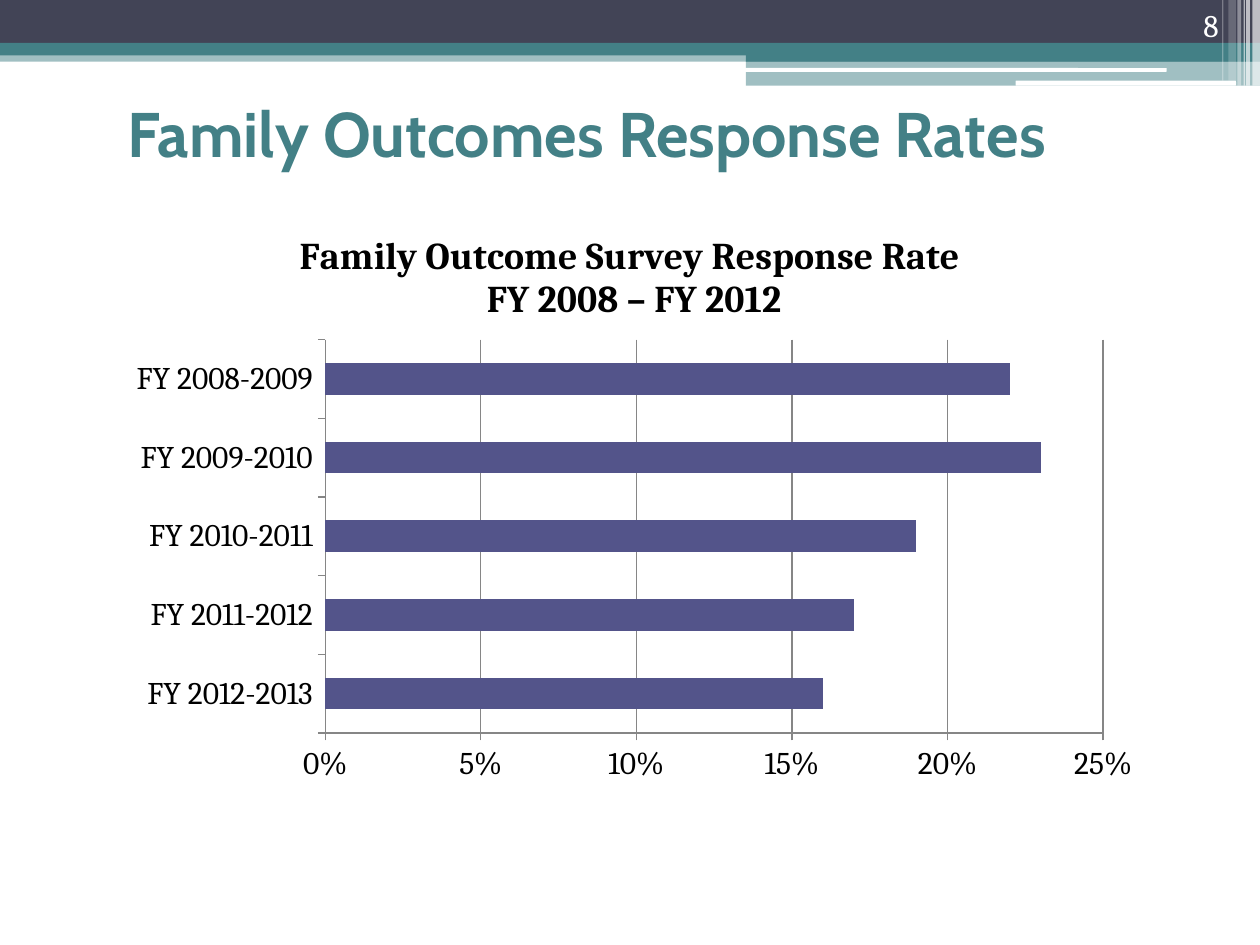
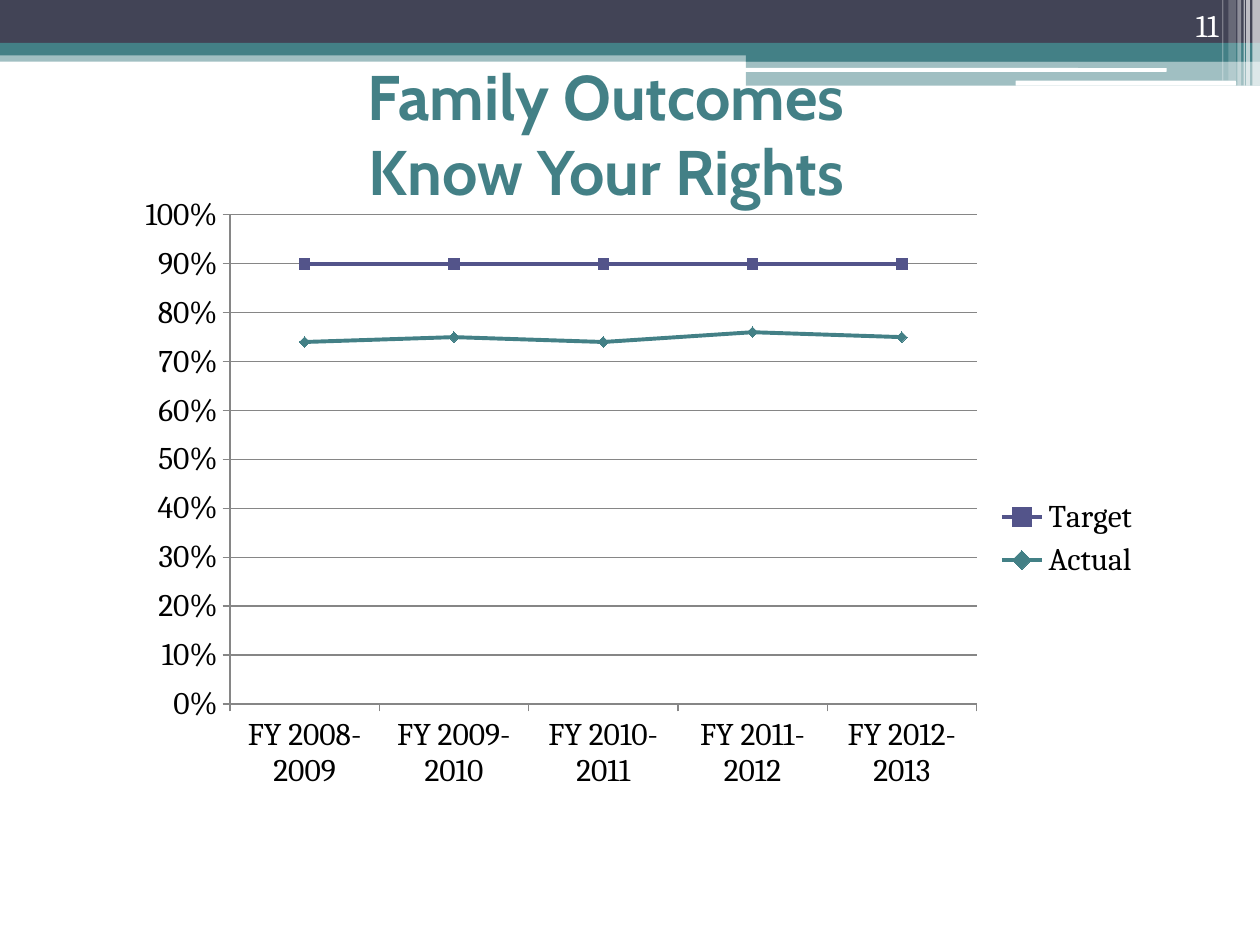
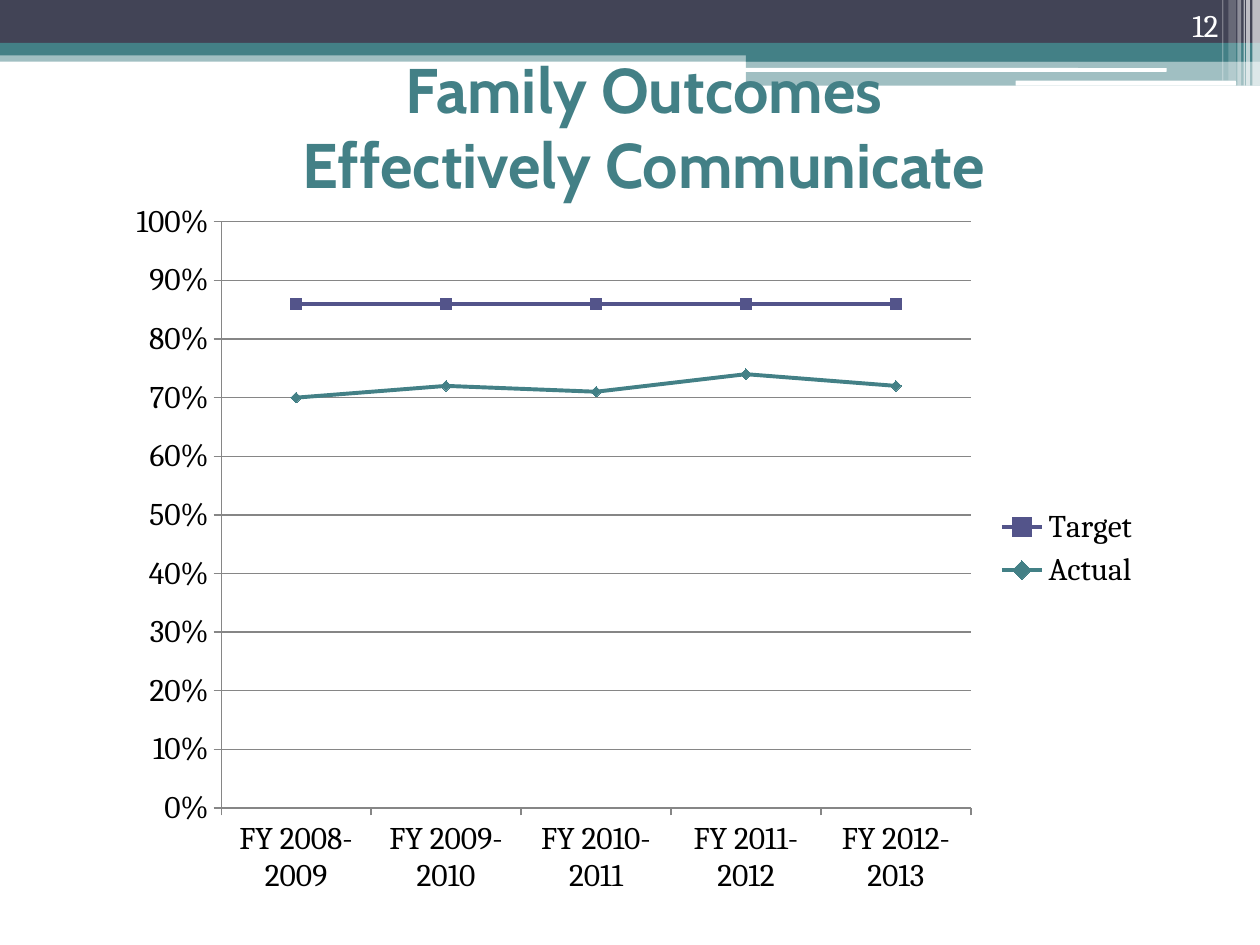
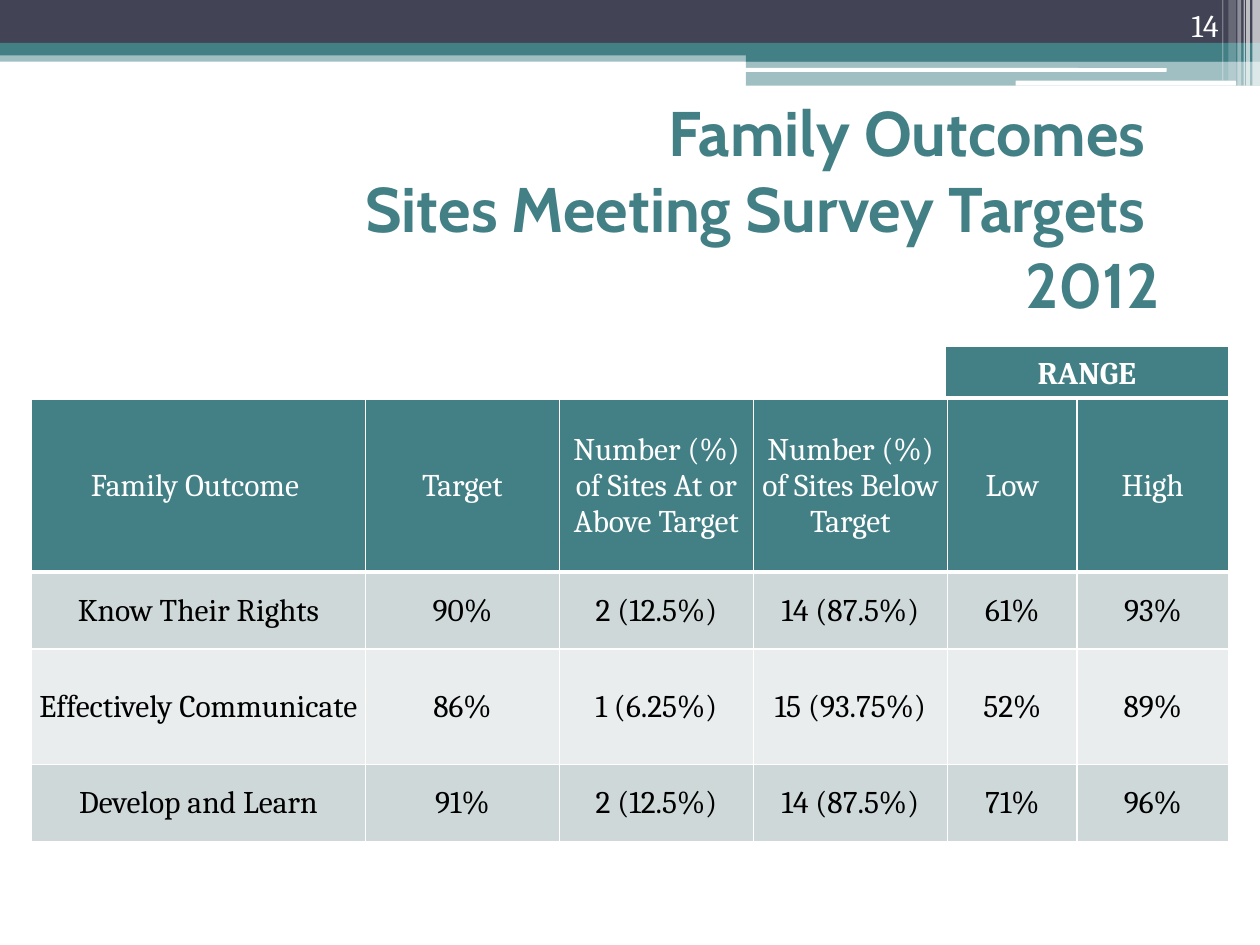
from dataclasses import dataclass

from lxml.etree import SubElement as Sub
from pptx import Presentation
from pptx.chart.chart import Chart
from pptx.chart.data import CategoryChartData as ChartData
from pptx.dml.color import RGBColor
from pptx.enum.chart import XL_CHART_TYPE as Kind
from pptx.enum.chart import XL_LEGEND_POSITION as Legend
from pptx.enum.chart import XL_MARKER_STYLE as Mark
from pptx.enum.chart import XL_TICK_MARK as Tick
from pptx.enum.shapes import MSO_SHAPE as Form
from pptx.enum.text import MSO_ANCHOR as Anchor
from pptx.enum.text import PP_ALIGN as Align
from pptx.oxml.ns import qn
from pptx.slide import Slide
from pptx.table import _Cell as Cell
from pptx.text.text import TextFrame
from pptx.util import Inches, Pt

# Colours and fonts
TEAL = RGBColor(0x43, 0x80, 0x86)
SLATE = RGBColor(0x42, 0x44, 0x56)
VIOLET = RGBColor(0x53, 0x54, 0x8A)
WHITE = RGBColor(0xFF, 0xFF, 0xFF)
BLACK = RGBColor(0, 0, 0)
GREY = RGBColor(0x86, 0x86, 0x86)
DARK_ROW = RGBColor(0xCF, 0xD8, 0xD9)
LIGHT_ROW = RGBColor(0xE9, 0xED, 0xED)
HEAD_FONT = "Cabin"
BODY_FONT = "Cambria"

YEARS = [f"FY {year}-{year + 1}" for year in range(2008, 2013)]


@dataclass(frozen=True)
class Box:
    left: float
    top: float
    width: float
    height: float

    def place(self) -> tuple:
        return tuple(map(Inches, (self.left, self.top, self.width, self.height)))


@dataclass(frozen=True)
class Band:
    box: Box
    color: RGBColor
    alpha: int = 100
    form: Form = Form.RECTANGLE


@dataclass(frozen=True)
class Style:
    size: float = 18
    color: RGBColor = BLACK
    font: str = BODY_FONT
    bold: bool = False


TITLE = Style(36, TEAL, HEAD_FONT, True)
PLAIN = Style()
LIGHT = Style(color=WHITE)
RANGE = Style(color=WHITE, bold=True)

# Header bands, then the fading stripes at the right edge
BANDS = [
    Band(Box(0, 0.4, 10, 0.09), TEAL, 50),
    Band(Box(0, 0, 10, 0.34), SLATE),
    Band(Box(0, 0.34, 10, 0.1), TEAL),
    Band(Box(5.92, 0.39, 4.08, 0.1), TEAL),
    Band(Box(5.92, 0.48, 4.08, 0.2), TEAL, 50),
    Band(Box(5.91, 0.54, 3.35, 0.03), WHITE, form=Form.ROUNDED_RECTANGLE),
    Band(Box(8.06, 0.64, 1.75, 0.04), WHITE, form=Form.ROUNDED_RECTANGLE),
] + [
    Band(Box(left, 0, width, height), WHITE, alpha)
    for left, width, height, alpha in [
        (9.94, 0.06, 0.68, 65), (9.89, 0.03, 0.68, 65), (9.87, 0.01, 0.68, 60),
        (9.82, 0.03, 0.68, 40), (9.75, 0.06, 0.64, 20), (9.7, 0.01, 0.64, 30),
    ]
]


# Text and shapes
def write(frame: TextFrame, text: str, style: Style, align: Align) -> None:
    para = frame.paragraphs[0]
    para.alignment = align
    for index, line in enumerate(text.split("\n")):
        if index:
            para.add_line_break()
        run = para.add_run()
        run.text = line
        font = run.font
        font.size, font.name, font.bold = Pt(style.size), style.font, style.bold
        font.color.rgb = style.color


def add_text(slide: Slide, box: Box, text: str, style: Style,
             align: Align, anchor: Anchor) -> None:
    frame = slide.shapes.add_textbox(*box.place()).text_frame
    frame.word_wrap = True
    frame.vertical_anchor = anchor
    write(frame, text, style, align)


def add_band(slide: Slide, band: Band):
    shape = slide.shapes.add_shape(band.form, *band.box.place())
    shape.shadow.inherit = False
    shape.fill.solid()
    shape.fill.fore_color.rgb = band.color
    shape.line.fill.background()
    if band.alpha < 100:
        color = shape.element.spPr.find(f"{qn('a:solidFill')}/{qn('a:srgbClr')}")
        Sub(color, qn("a:alpha"), val=str(band.alpha * 1000))
    return shape


def add_slide(deck, number: int, title: str, box: Box,
              align: Align = Align.CENTER) -> Slide:
    slide = deck.slides.add_slide(deck.slide_layouts[6])
    for band in BANDS:
        add_band(slide, band)
    add_text(slide, box, title, TITLE, align, Anchor.MIDDLE)
    add_text(slide, Box(8.94, 0, 0.83, 0.4), str(number), LIGHT,
             Align.RIGHT, Anchor.BOTTOM)
    return slide


# Charts
def add_chart(slide: Slide, kind: Kind, box: Box, cats: list[str],
              series: dict[str, tuple], top: float, step: float) -> Chart:
    data = ChartData(number_format="0%")
    data.categories = cats
    for name, values in series.items():
        data.add_series(name, values)
    chart = slide.shapes.add_chart(kind, *box.place(), data).chart
    chart.font.size, chart.font.name = Pt(18), BODY_FONT
    chart.font.color.rgb = BLACK
    chart.has_title = chart.has_legend = False
    chart.plots[0].vary_by_categories = False
    scale = chart.value_axis
    scale.minimum_scale, scale.maximum_scale, scale.major_unit = 0, top, step
    scale.tick_labels.number_format = "0%"
    scale.tick_labels.number_format_is_linked = False
    scale.has_major_gridlines = True
    for axis in (scale, chart.category_axis):
        axis.major_tick_mark = Tick.OUTSIDE
    for part in (scale, chart.category_axis, scale.major_gridlines):
        part.format.line.color.rgb = GREY
        part.format.line.width = Pt(0.75)
    return chart


def add_bars(slide: Slide) -> None:
    rates = (0.16, 0.17, 0.19, 0.23, 0.22)
    chart = add_chart(slide, Kind.BAR_CLUSTERED, Box(0.92, 1.67, 8.23, 4.63),
                      YEARS[::-1], {"Series 1": rates}, 0.25, 0.05)
    plot = chart.plots[0]
    plot.gap_width = 150
    fill = plot.series[0].format.fill
    fill.solid()
    fill.fore_color.rgb = VIOLET
    chart.has_title = True
    write(chart.chart_title.text_frame,
          "Family Outcome Survey Response Rate \nFY 2008 – FY 2012",
          Style(21.6, bold=True), Align.CENTER)
    chart.chart_title.include_in_layout = False


def add_lines(slide: Slide, top: float, target: float, actual: tuple) -> Chart:
    series = {"Target": (target,) * len(YEARS), "Actual": actual}
    chart = add_chart(slide, Kind.LINE_MARKERS, Box(0.92, top, 8.23, 5.71),
                      YEARS, series, 1, 0.1)
    looks = [(VIOLET, Mark.SQUARE), (TEAL, Mark.DIAMOND)]
    for line, (color, mark) in zip(chart.plots[0].series, looks):
        line.smooth = False
        line.format.line.color.rgb = color
        line.format.line.width = Pt(2.25)
        line.marker.style, line.marker.size = mark, 6
        line.marker.format.fill.solid()
        line.marker.format.fill.fore_color.rgb = color
        line.marker.format.line.color.rgb = color
    chart.has_legend = True
    chart.legend.position = Legend.RIGHT
    chart.legend.include_in_layout = False
    return chart


def set_plot(chart: Chart, left: float, top: float,
             width: float, height: float) -> None:
    area = chart.element.find(f".//{qn('c:plotArea')}")
    layout = area.find(qn("c:layout"))
    if layout is None:
        layout = area.makeelement(qn("c:layout"))
        area.insert(0, layout)
    manual = Sub(layout, qn("c:manualLayout"))
    parts = {"layoutTarget": "inner", "xMode": "edge", "yMode": "edge",
             "x": left, "y": top, "w": width, "h": height}
    for name, value in parts.items():
        Sub(manual, qn(f"c:{name}"), val=str(value))


# Table
def set_edges(cell: Cell, base: float) -> None:
    props = cell._tc.get_or_add_tcPr()
    for side, width in {"L": 1, "R": 1, "T": 1, "B": base}.items():
        edge = Sub(props, qn(f"a:ln{side}"), w=str(Pt(width)))
        Sub(Sub(edge, qn("a:solidFill")), qn("a:srgbClr"), val=str(WHITE))


def add_table(slide: Slide) -> None:
    rows = [
        ("Family Outcome ", "Target", "Number (%) of Sites At or Above Target",
         "Number (%) of Sites Below Target", "Low", "High"),
        ("Know Their Rights", "90%", "2 (12.5%)", "14 (87.5%)", "61%", "93%"),
        ("Effectively Communicate", "86%", "1 (6.25%)", "15 (93.75%)", "52%", "89%"),
        ("Develop and Learn", "91%", "2 (12.5%)", "14 (87.5%)", "71%", "96%"),
    ]
    widths = (2.65, 1.54, 1.54, 1.54, 1.03, 1.2)
    heights = (1.37, 0.61, 0.92, 0.61)
    fills = (TEAL, DARK_ROW, LIGHT_ROW, DARK_ROW)
    table = slide.shapes.add_table(len(rows), len(widths),
                                   *Box(0.25, 3.17, 9.5, 3.5).place()).table
    table.first_row = table.horz_banding = False
    for col, width in zip(table.columns, widths):
        col.width = Inches(width)
    for index, (row, texts) in enumerate(zip(table.rows, rows)):
        row.height = Inches(heights[index])
        head = index == 0
        for cell, text in zip(row.cells, texts):
            cell.margin_left = cell.margin_right = cell.margin_top = Inches(0.01)
            cell.margin_bottom = 0
            cell.vertical_anchor = Anchor.MIDDLE
            set_edges(cell, 3 if head else 1)
            cell.fill.solid()
            cell.fill.fore_color.rgb = fills[index]
            write(cell.text_frame, text, LIGHT if head else PLAIN, Align.CENTER)


def add_range(slide: Slide) -> None:
    shape = add_band(slide, Band(Box(7.5, 2.75, 2.25, 0.4), TEAL))
    shape.line.color.rgb = WHITE
    shape.line.width = Pt(0.75)
    shape.text_frame.vertical_anchor = Anchor.TOP
    write(shape.text_frame, "RANGE", RANGE, Align.CENTER)


def main() -> None:
    deck = Presentation()
    deck.slide_width, deck.slide_height = Inches(10), Inches(7.5)

    # Response rates
    add_bars(add_slide(deck, 8, "Family Outcomes Response Rates",
                       Box(0.17, 0.75, 8.97, 0.6)))

    # Know your rights
    slide = add_slide(deck, 11, "Family Outcomes\nKnow Your Rights",
                      Box(0.5, 0.67, 8.62, 0.77))
    chart = add_lines(slide, 1.42, 0.9, (0.74, 0.75, 0.74, 0.76, 0.75))
    set_plot(chart, 0.11, 0.05, 0.72, 0.68)

    # Effectively communicate
    slide = add_slide(deck, 12, "Family Outcomes\nEffectively Communicate",
                      Box(1, 0.58, 8.22, 0.84))
    add_lines(slide, 1.5, 0.86, (0.7, 0.72, 0.71, 0.74, 0.72))

    # Sites meeting targets
    slide = add_slide(deck, 14,
                      "Family Outcomes \nSites Meeting Survey Targets \n2012",
                      Box(1.08, 1.08, 8.22, 1.13), Align.RIGHT)
    add_table(slide)
    add_range(slide)

    deck.save("out.pptx")


if __name__ == "__main__":
    main()
